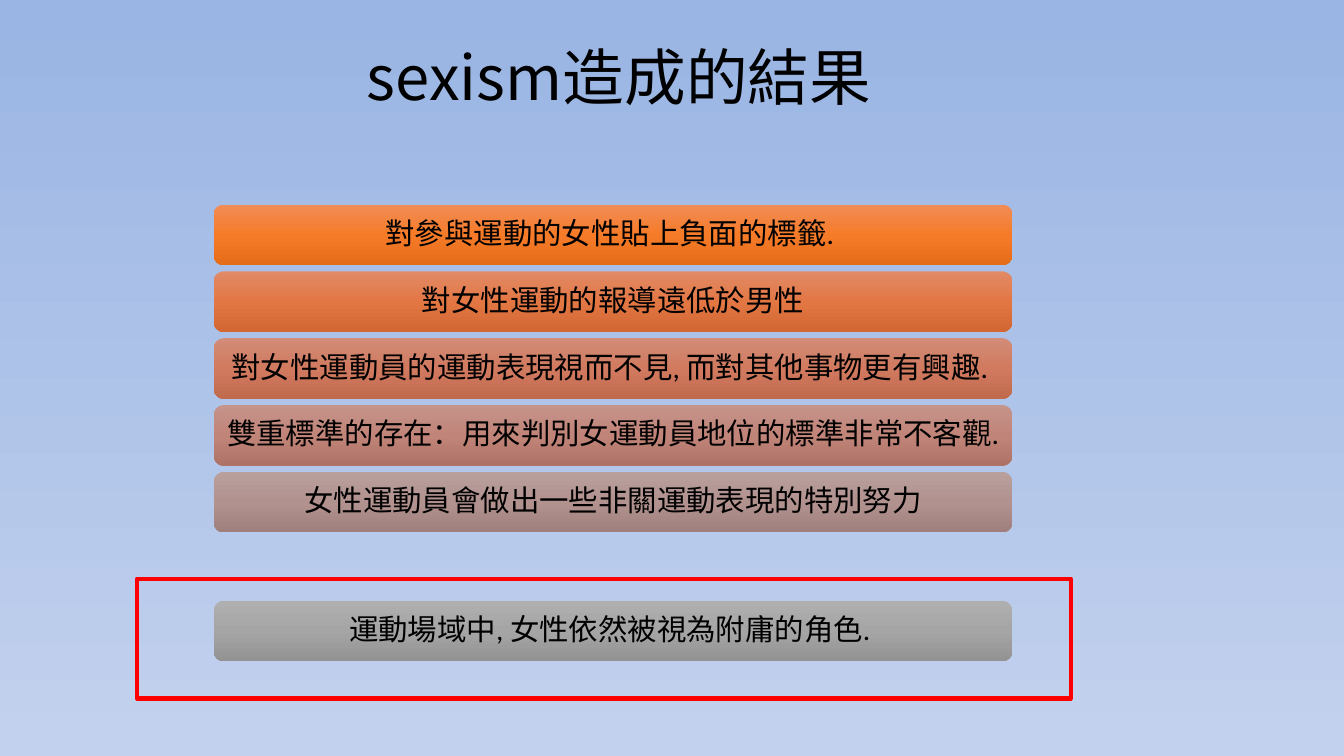
from pptx import Presentation
from pptx.util import Inches, Pt
from pptx.dml.color import RGBColor
from pptx.enum.shapes import MSO_SHAPE as Shape
from pptx.enum.text import MSO_ANCHOR as Anchor, PP_ALIGN as Align
from pptx.oxml.ns import qn
from copy import deepcopy
from lxml import etree

# Content: the title, then each bar as text, top and gradient name
TITLE = "sexism造成的結果"
RESULTS = [
    ("對參與運動的女性貼上負面的標籤. ", "orange"),
    ("對女性運動的報導遠低於男性", "coral"),
    ("對女性運動員的運動表現視而不見, 而對其他事物更有興趣. ", "salmon"),
    ("雙重標準的存在：用來判別女運動員地位的標準非常不客觀. ", "rose"),
    ("女性運動員會做出一些非關運動表現的特別努力", "mauve"),
]
CONCLUSION = "運動場域中, 女性依然被視為附庸的角色. "

COLORS = {"text": "000000", "frame": "FF0000"}
GRADIENTS = {
    "sky": ["9AB5E4", "C2D1ED"],
    "orange": ["F18C57", "F67B28", "E56C19"],
    "coral": ["E18A66", "E37744", "D26734"],
    "salmon": ["D28C78", "D17A5F", "C06A4E"],
    "rose": ["C5948B", "C18478", "AF7267"],
    "mauve": ["B9A09D", "B2928F", "A0807D"],
    "gray": ["AFAFAF", "A5A5A5", "939393"],
}
CJK_FONT = "Noto Sans CJK SC"
BAR_LEFT, BAR_WIDTH, BAR_HEIGHT = 2.12, 7.92, 0.6
FIRST_TOP, BAR_STEP, CONCLUSION_TOP = 2.03, 0.663, 5.96


def paint_gradient(fill, owner, name):
    """Fill from top to bottom with evenly spaced colours."""
    colors = GRADIENTS[name]
    fill.gradient()
    fill.gradient_angle = 270
    stop_list = next(owner.iter(qn("a:gsLst")))
    while len(stop_list) < len(colors):
        stop_list.append(deepcopy(stop_list[0]))
    for index, (stop, color) in enumerate(zip(fill.gradient_stops, colors)):
        stop.position = index / (len(colors) - 1)
        stop.color.rgb = RGBColor.from_string(color)


def write_text(box, text, size, font, inset_x, inset_y, spacing=1.0, after=0):
    frame = box.text_frame
    frame.word_wrap = True
    frame.vertical_anchor = Anchor.MIDDLE
    frame.margin_left = frame.margin_right = Inches(inset_x)
    frame.margin_top = frame.margin_bottom = Inches(inset_y)
    para = frame.paragraphs[0]
    para.alignment = Align.CENTER
    para.line_spacing = spacing
    para.space_after = Pt(after)
    span = para.add_run()
    span.text = text
    span.font.size = Pt(size)
    span.font.name = font
    span.font.color.rgb = RGBColor.from_string(COLORS["text"])
    latin = span.font._element.find(qn("a:latin"))
    east_asian = etree.Element(qn("a:ea"), typeface=CJK_FONT)
    latin.addnext(east_asian)


def add_bar(slide, text, top, gradient):
    bar = slide.shapes.add_shape(Shape.ROUNDED_RECTANGLE, Inches(BAR_LEFT), Inches(top),
                                 Inches(BAR_WIDTH), Inches(BAR_HEIGHT))
    bar.shadow.inherit = False
    bar.line.fill.background()
    paint_gradient(bar.fill, bar._element, gradient)
    write_text(bar, text, size=21, font="Calibri", inset_x=0.09, inset_y=0.09,
               spacing=0.9, after=7.35)


def main():
    deck = Presentation()
    deck.slide_width, deck.slide_height = Inches(13.33), Inches(7.5)
    page = deck.slides.add_slide(deck.slide_layouts[6])
    paint_gradient(page.background.fill, page._element, "sky")

    # Title
    title = page.shapes.add_textbox(Inches(2.18), Inches(0.13), Inches(7.92), Inches(1.25))
    write_text(title, TITLE, size=44, font=CJK_FONT, inset_x=0.1, inset_y=0.05)

    # Stacked results and the conclusion below them
    for row, (text, gradient) in enumerate(RESULTS):
        add_bar(page, text, FIRST_TOP + row * BAR_STEP, gradient)
    add_bar(page, CONCLUSION, CONCLUSION_TOP, "gray")

    # Red frame around the conclusion
    frame = page.shapes.add_shape(Shape.RECTANGLE, Inches(1.36), Inches(5.74),
                                  Inches(9.26), Inches(1.19))
    frame.shadow.inherit = False
    frame.fill.background()
    frame.line.color.rgb = RGBColor.from_string(COLORS["frame"])
    frame.line.width = Pt(3)

    deck.save("out.pptx")


if __name__ == "__main__":
    main()
